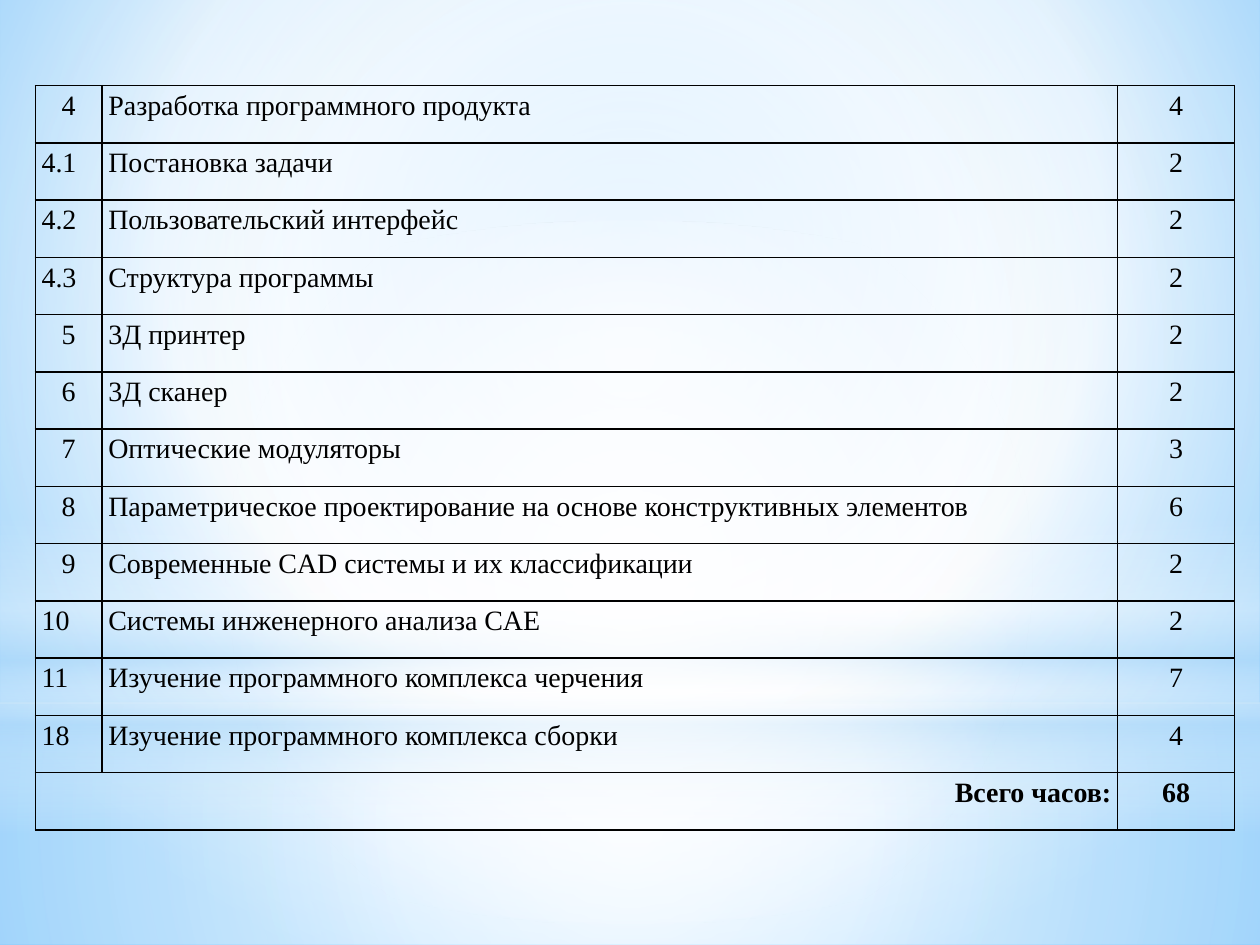
import pptx
import pptx.util
import pptx.oxml
import pptx.oxml.ns
from pptx.dml.color import RGBColor
from pptx.enum.shapes import MSO_SHAPE
from pptx.enum.text import MSO_ANCHOR, PP_ALIGN
from pptx.util import Inches

BLACK = RGBColor(0x00, 0x00, 0x00)
WHITE = RGBColor(0xFF, 0xFF, 0xFF)
PALE = RGBColor(0xB4, 0xDC, 0xFA)
SKY = RGBColor(0x9E, 0xD5, 0xFF)
BLUE = RGBColor(0x5B, 0xB9, 0xFF)
FONT = "Times New Roman"

CENTER = (50, 50, 50, 50)
BACKDROP = ([(0, SKY, 100), (60, WHITE, 100), (100, BLUE, 100)], (20, 10, 20, 60))
LAYERS = [
    (MSO_SHAPE.RECTANGLE, 5.58, 1.92,
     [(0, WHITE, 91), (37, WHITE, 76), (100, PALE, 79)], CENTER),
    (MSO_SHAPE.RECTANGLE, 0, 5.58,
     [(0, WHITE, 89), (48, WHITE, 62), (100, PALE, 79)], CENTER),
    (MSO_SHAPE.RECTANGLE, 4.12, 2.5,
     [(0, WHITE, 0), (29, WHITE, 30), (45, PALE, 40),
      (55, WHITE, 26), (65, PALE, 60), (100, WHITE, 0)], None),
    (MSO_SHAPE.OVAL, 1.75, 5.58, [(0, WHITE, 100), (56, WHITE, 0)], CENTER),
]

TOPICS = [
    ("4", "Разработка программного продукта", "4"),
    ("4.1", "Постановка задачи", "2"),
    ("4.2", "Пользовательский интерфейс", "2"),
    ("4.3", "Структура программы", "2"),
    ("5", "3Д принтер", "2"),
    ("6", "3Д сканер", "2"),
    ("7", "Оптические модуляторы", "3"),
    ("8", "Параметрическое проектирование на основе конструктивных элементов", "6"),
    ("9", "Современные CAD системы и их классификации", "2"),
    ("10", "Системы инженерного анализа CAE", "2"),
    ("11", "Изучение программного комплекса черчения", "7"),
    ("18", "Изучение программного комплекса сборки", "4"),
]
TOTAL = ("Всего часов:", "68")
COLUMN_WIDTHS = (0.53, 8.06, 0.93)
TABLE_LEFT, TABLE_TOP, TABLE_HEIGHT = 0.28, 0.68, 5.91


def paint_gradient(fill, element, stops, focus):
    fill.gradient()
    stop_xml = "".join(
        f'<a:gs pos="{position * 1000}"><a:srgbClr val="{color}">'
        f'<a:alpha val="{opacity * 1000}"/></a:srgbClr></a:gs>'
        for position, color, opacity in stops)
    if focus:
        left, top, right, bottom = (value * 1000 for value in focus)
        direction = (f'<a:path path="circle"><a:fillToRect l="{left}" t="{top}" '
                     f'r="{right}" b="{bottom}"/></a:path>')
    else:
        direction = '<a:lin ang="5400000" scaled="0"/>'
    gradient = pptx.oxml.parse_xml(
        f'<a:gradFill {pptx.oxml.ns.nsdecls("a")} rotWithShape="1">'
        f'<a:gsLst>{stop_xml}</a:gsLst>{direction}</a:gradFill>')
    current = element.find(f'.//{pptx.oxml.ns.qn("a:gradFill")}')
    current.getparent().replace(current, gradient)


def add_borders(cell):
    properties = cell._tc.get_or_add_tcPr()
    for index, side in enumerate(("lnL", "lnR", "lnT", "lnB")):
        properties.insert(index, pptx.oxml.parse_xml(
            f'<a:{side} {pptx.oxml.ns.nsdecls("a")} w="12700"><a:solidFill>'
            f'<a:srgbClr val="{BLACK}"/></a:solidFill></a:{side}>'))


def write_text(cell, text, align=PP_ALIGN.JUSTIFY, bold=False, size=16):
    paragraph = cell.text_frame.paragraphs[0]
    paragraph.alignment = align
    paragraph.line_spacing = 1.15
    run = paragraph.add_run()
    run.text = text
    run.font.name = FONT
    run.font.size = pptx.util.Pt(size)
    run.font.bold = bold
    run.font.color.rgb = BLACK


def add_layers(slide, width):
    paint_gradient(slide.background.fill, slide.element, *BACKDROP)
    for kind, top, height, stops, focus in LAYERS:
        shape = slide.shapes.add_shape(kind, 0, Inches(top), width, Inches(height))
        shape.shadow.inherit = False
        shape.line.fill.background()
        paint_gradient(shape.fill, shape.element, stops, focus)


def add_topic_table(slide):
    row_count = len(TOPICS) + 1
    table = slide.shapes.add_table(
        row_count, len(COLUMN_WIDTHS), Inches(TABLE_LEFT), Inches(TABLE_TOP),
        Inches(sum(COLUMN_WIDTHS)), Inches(TABLE_HEIGHT)).table
    table.first_row = False
    table.horz_banding = False
    for column, width in zip(table.columns, COLUMN_WIDTHS):
        column.width = Inches(width)
    for row in table.rows:
        row.height = Inches(TABLE_HEIGHT / row_count)
    for cell in table.iter_cells():
        cell.margin_left = cell.margin_right = Inches(0.05)
        cell.margin_top = cell.margin_bottom = 0
        cell.vertical_anchor = MSO_ANCHOR.TOP
        cell.fill.background()
        add_borders(cell)

    for row, (number, topic, hours) in enumerate(TOPICS):
        number_align = PP_ALIGN.CENTER if len(number) == 1 else PP_ALIGN.JUSTIFY
        write_text(table.cell(row, 0), number, align=number_align)
        write_text(table.cell(row, 1), topic)
        write_text(table.cell(row, 2), hours, align=PP_ALIGN.CENTER)
    last = row_count - 1
    table.cell(last, 0).merge(table.cell(last, 1))
    write_text(table.cell(last, 0), TOTAL[0], align=PP_ALIGN.RIGHT, bold=True)
    write_text(table.cell(last, 2), TOTAL[1], align=PP_ALIGN.CENTER, bold=True)


def main():
    presentation = pptx.Presentation()
    presentation.slide_width = Inches(10)
    presentation.slide_height = Inches(7.5)
    slide = presentation.slides.add_slide(presentation.slide_layouts[6])
    add_layers(slide, presentation.slide_width)
    add_topic_table(slide)
    presentation.save("out.pptx")


if __name__ == "__main__":
    main()
